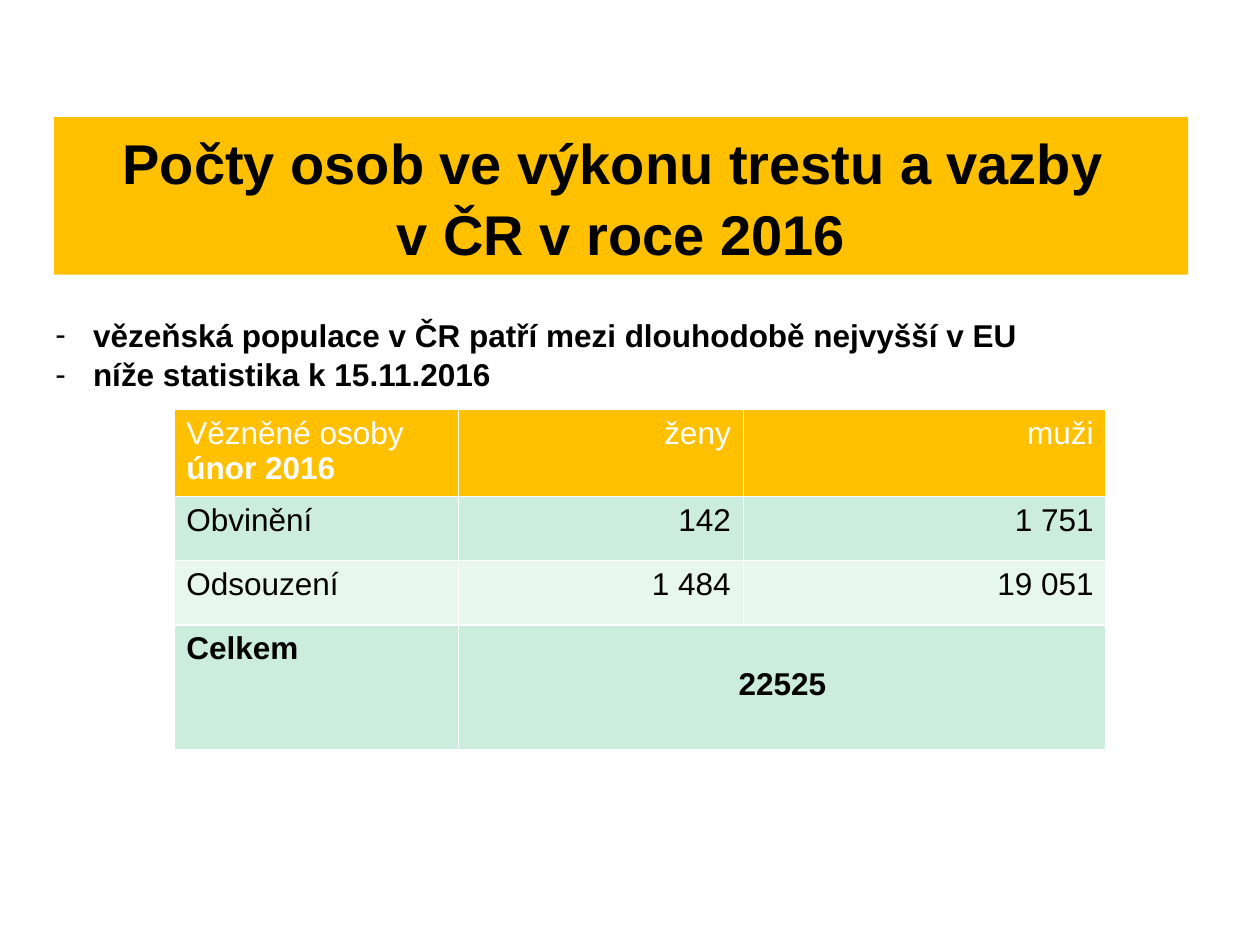
from lxml.etree import SubElement
from pptx import Presentation
from pptx.dml.color import RGBColor
from pptx.enum.shapes import MSO_SHAPE as Shape
from pptx.enum.text import MSO_ANCHOR as Anchor, PP_ALIGN as Align
from pptx.oxml.ns import qn
from pptx.util import Pt

PX = 9144  # 100 px to the inch

AMBER = RGBColor(0xFF, 0xC0, 0x00)
MINT = RGBColor(0xCC, 0xEC, 0xDE)
PALE_MINT = RGBColor(0xE7, 0xF6, 0xEF)
WHITE = RGBColor(0xFF, 0xFF, 0xFF)
BLACK = RGBColor(0x00, 0x00, 0x00)

TITLE = "Počty osob ve výkonu trestu a vazby \vv ČR v roce 2016"
BULLETS = [
    "vězeňská populace v ČR patří mezi dlouhodobě nejvyšší v EU",
    "níže statistika k 15.11.2016",
]
ROWS = [
    ["Vězněné osoby\núnor 2016", "ženy", "muži"],
    ["Obvinění", "142", "1 751"],
    ["Odsouzení", "1 484", "19 051"],
    ["Celkem", "22525", ""],
]
BOLD_TEXTS = {"únor 2016", "Celkem", "22525"}
ROW_FILLS = [AMBER, MINT, PALE_MINT, MINT]
COLUMN_WIDTHS = [226, 226, 288]
ROW_HEIGHTS = [69, 51, 51, 99]

BULLET_INDENT = 30
TOTAL_TOP_MARGIN = 33
HEADING_SPACING = 1.05


def px(*lengths):
    return [length * PX for length in lengths]


def format_text(paragraph, size, color=BLACK, bold=True, **settings):
    for name, value in settings.items():
        setattr(paragraph, name, value)
    font_format = {"name": "Arial", "size": Pt(size), "bold": bold}
    for name, value in font_format.items():
        setattr(paragraph.font, name, value)
    paragraph.font.color.rgb = color


def add_dash(paragraph):
    """Give the paragraph a hanging dash bullet."""
    properties = paragraph._p.get_or_add_pPr()
    properties.set("marL", str(BULLET_INDENT * PX))
    properties.set("indent", str(-BULLET_INDENT * PX))
    SubElement(properties, qn("a:buFont")).set("typeface", "Arial")
    SubElement(properties, qn("a:buChar")).set("char", "-")


def add_title(slide):
    banner = slide.shapes.add_shape(Shape.RECTANGLE, *px(43, 93, 900, 125))
    banner.shadow.inherit = False
    banner.fill.solid()
    banner.fill.fore_color.rgb = AMBER
    banner.line.fill.background()
    frame = banner.text_frame
    frame.vertical_anchor = Anchor.MIDDLE
    frame.text = TITLE
    format_text(frame.paragraphs[0], 32, alignment=Align.CENTER,
                line_spacing=HEADING_SPACING)


def add_bullets(slide):
    frame = slide.shapes.add_textbox(*px(34, 244, 829, 71)).text_frame
    frame.word_wrap = True
    frame.text = "\n".join(BULLETS)
    for paragraph in frame.paragraphs:
        paragraph.line_spacing = HEADING_SPACING
        add_dash(paragraph)
        format_text(paragraph, 18)


def add_prisoner_table(slide):
    table = slide.shapes.add_table(
        len(ROWS), len(COLUMN_WIDTHS),
        *px(138, 325, sum(COLUMN_WIDTHS), sum(ROW_HEIGHTS))).table
    for column, width in zip(table.columns, COLUMN_WIDTHS):
        column.width = width * PX
    for row, height in zip(table.rows, ROW_HEIGHTS):
        row.height = height * PX

    for row_index, (texts, fill) in enumerate(zip(ROWS, ROW_FILLS)):
        color = WHITE if row_index == 0 else BLACK
        for column_index, text in enumerate(texts):
            cell = table.cell(row_index, column_index)
            cell.fill.solid()
            cell.fill.fore_color.rgb = fill
            cell.text = text
            alignment = Align.RIGHT if column_index else Align.LEFT
            for paragraph in cell.text_frame.paragraphs:
                format_text(paragraph, 18, color, paragraph.text in BOLD_TEXTS,
                            alignment=alignment)

    last_row = len(ROWS) - 1
    total = table.cell(last_row, 1)
    total.merge(table.cell(last_row, 2))
    total.margin_top = TOTAL_TOP_MARGIN * PX
    total.text_frame.paragraphs[0].alignment = Align.CENTER


def main():
    presentation = Presentation()
    presentation.slide_width, presentation.slide_height = px(1000, 750)
    slide = presentation.slides.add_slide(presentation.slide_layouts[6])
    add_title(slide)
    add_prisoner_table(slide)
    add_bullets(slide)
    presentation.save("out.pptx")


if __name__ == "__main__":
    main()
